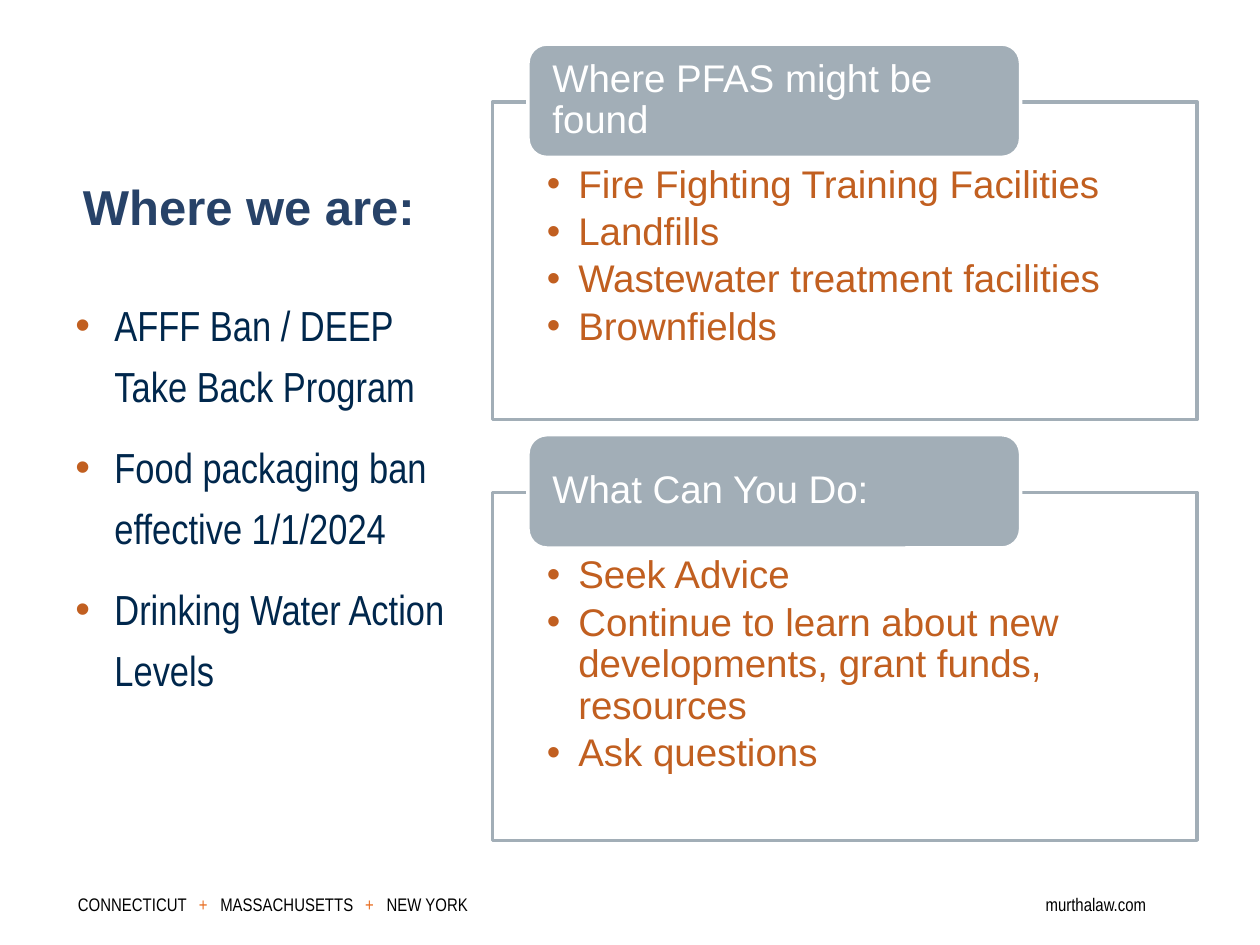
from dataclasses import dataclass
from typing import Optional

from lxml.etree import SubElement
from pptx import Presentation
from pptx.dml.color import RGBColor
from pptx.enum.shapes import MSO_SHAPE as Shape
from pptx.enum.text import MSO_ANCHOR as Anchor, PP_ALIGN as Align
from pptx.oxml.ns import qn
from pptx.util import Pt

SCALE = 9144
NAVY, INK, RUST, GREY = "274268", "00274C", "C15F20", "A2AEB7"
WHITE, BLACK, FLAME = "FFFFFF", "000000", "E86C1F"


@dataclass(frozen=True)
class Box:
    """A frame in px."""
    left: int
    top: int
    width: int
    height: int


@dataclass(frozen=True)
class Style:
    """The look of a run of text."""
    size: int
    hue: str
    face: str = "Arial"
    bold: bool = False
    raised: bool = False


@dataclass(frozen=True)
class Flow:
    """The spacing and bullet of a paragraph."""
    lead: float = 1.0
    after: float = 0
    dent: int = 0


@dataclass(frozen=True)
class Panel:
    """A framed list with a header tab."""
    top: int
    height: int
    head: str
    points: tuple[str, ...]


def px(size: int) -> int:
    """Turn px into EMU."""
    return size * SCALE


def paint(target, hue: str) -> None:
    """Give a fill a solid colour."""
    target.solid()
    target.fore_color.rgb = RGBColor.from_string(hue)


def place(box: Box) -> tuple[int, int, int, int]:
    """Turn a frame into EMU."""
    return px(box.left), px(box.top), px(box.width), px(box.height)


def set_frame(frame, pads: tuple[int, int, int, int], anchor=Anchor.TOP):
    """Set wrap, insets and anchor of a text frame."""
    frame.word_wrap = True
    frame.margin_left, frame.margin_top, frame.margin_right, frame.margin_bottom = map(px, pads)
    frame.vertical_anchor = anchor
    return frame


def add_text(slide, box: Box, anchor=Anchor.TOP):
    """Add a text box and return its frame."""
    return set_frame(slide.shapes.add_textbox(*place(box)).text_frame, (10, 5, 10, 5), anchor)


def add_run(para, text: str, style: Style) -> None:
    """Add one styled run."""
    run = para.add_run()
    run.text = text
    font = run.font
    font.size, font.name, font.bold = Pt(style.size), style.face, style.bold
    paint(font.fill, style.hue)
    if style.raised:
        run._r.get_or_add_rPr().set("baseline", "30000")


def add_lines(frame, lines: tuple[str, ...], style: Style, flow: Flow = Flow()) -> None:
    """Write one paragraph for each line."""
    for order, line in enumerate(lines):
        para = frame.add_paragraph() if order else frame.paragraphs[0]
        if flow.dent:
            props = para._p.get_or_add_pPr()
            props.set("marL", str(px(flow.dent)))
            props.set("indent", str(-px(flow.dent)))
            SubElement(SubElement(props, qn("a:buClr")), qn("a:srgbClr"), val=RUST)
            SubElement(props, qn("a:buFont"), typeface="Arial")
            SubElement(props, qn("a:buChar"), char="•")
        para.alignment = Align.LEFT
        para.line_spacing, para.space_after = flow.lead, Pt(flow.after)
        add_run(para, line, style)


def add_block(slide, kind, box: Box, fill: str, line: str, clear: Optional[int] = None):
    """Add a filled and outlined shape, opaque unless a percent is given."""
    block = slide.shapes.add_shape(kind, *place(box))
    block.shadow.inherit = False
    paint(block.fill, fill)
    paint(block.line.fill, line)
    block.line.width = Pt(2)
    if clear:
        hue = block._element.spPr.find(qn("a:solidFill"))[0]
        SubElement(hue, qn("a:alpha"), val=str(1000 * clear))
    return block


def add_panel(slide, panel: Panel) -> None:
    """Draw a panel and the tab on its top edge."""
    frame = Box(391, panel.top, 559, panel.height)
    body = add_block(slide, Shape.RECTANGLE, frame, WHITE, GREY, 90)
    text = set_frame(body.text_frame, (43, 50, 43, 17))
    add_lines(text, panel.points, Style(22, RUST), Flow(0.9, 3.3, 25))
    label = Box(419, panel.top - 46, 391, 90)
    tab = add_block(slide, Shape.ROUNDED_RECTANGLE, label, GREY, WHITE)
    text = set_frame(tab.text_frame, (15, 0, 15, 0), Anchor.MIDDLE)
    add_lines(text, (panel.head,), Style(22, WHITE), Flow(0.9))


def add_foot(slide) -> None:
    """Write the footer on tab stops."""
    para = add_text(slide, Box(52, 701, 948, 40)).paragraphs[0]
    stops = SubElement(para._p.get_or_add_pPr(), qn("a:tabLst"))
    for stop in (96, 113, 228, 245, 768):
        SubElement(stops, qn("a:tab"), pos=str(px(stop)), algn="l")
    plain = Style(18, BLACK, "Arial Narrow", raised=True)
    plus = Style(18, FLAME, "Arial Narrow", raised=True)
    for text, style in (
        ("CONNECTICUT\t", plain),
        ("+", plus),
        ("\tMASSACHUSETTS\t", plain),
        ("+", plus),
        ("\tNEW YORK\tmurthalaw.com", plain),
    ):
        add_run(para, text, style)


def main() -> None:
    """Build and save the slide."""
    deck = Presentation()
    deck.slide_width, deck.slide_height = px(1000), px(750)
    slide = deck.slides.add_slide(deck.slide_layouts[6])
    paint(slide.background.fill, WHITE)
    add_foot(slide)
    title = add_text(slide, Box(56, 125, 321, 67), Anchor.BOTTOM)
    add_lines(title, ("Where we are:",), Style(28, NAVY, bold=True))
    news = (
        "AFFF Ban / DEEP Take Back Program",
        "Food packaging ban effective 1/1/2024",
        "Drinking Water Action Levels",
    )
    body = add_text(slide, Box(50, 225, 329, 443))
    add_lines(body, news, Style(24, INK, "Arial Narrow"), Flow(1.2, 12, 31))
    for panel in (
        Panel(81, 252, "Where PFAS might be found", (
            "Fire Fighting Training Facilities",
            "Landfills",
            "Wastewater treatment facilities",
            "Brownfields",
        )),
        Panel(391, 276, "What Can You Do:", (
            "Seek Advice",
            "Continue to learn about new developments, grant funds, resources",
            "Ask questions",
        )),
    ):
        add_panel(slide, panel)
    deck.save("out.pptx")


if __name__ == "__main__":
    main()
